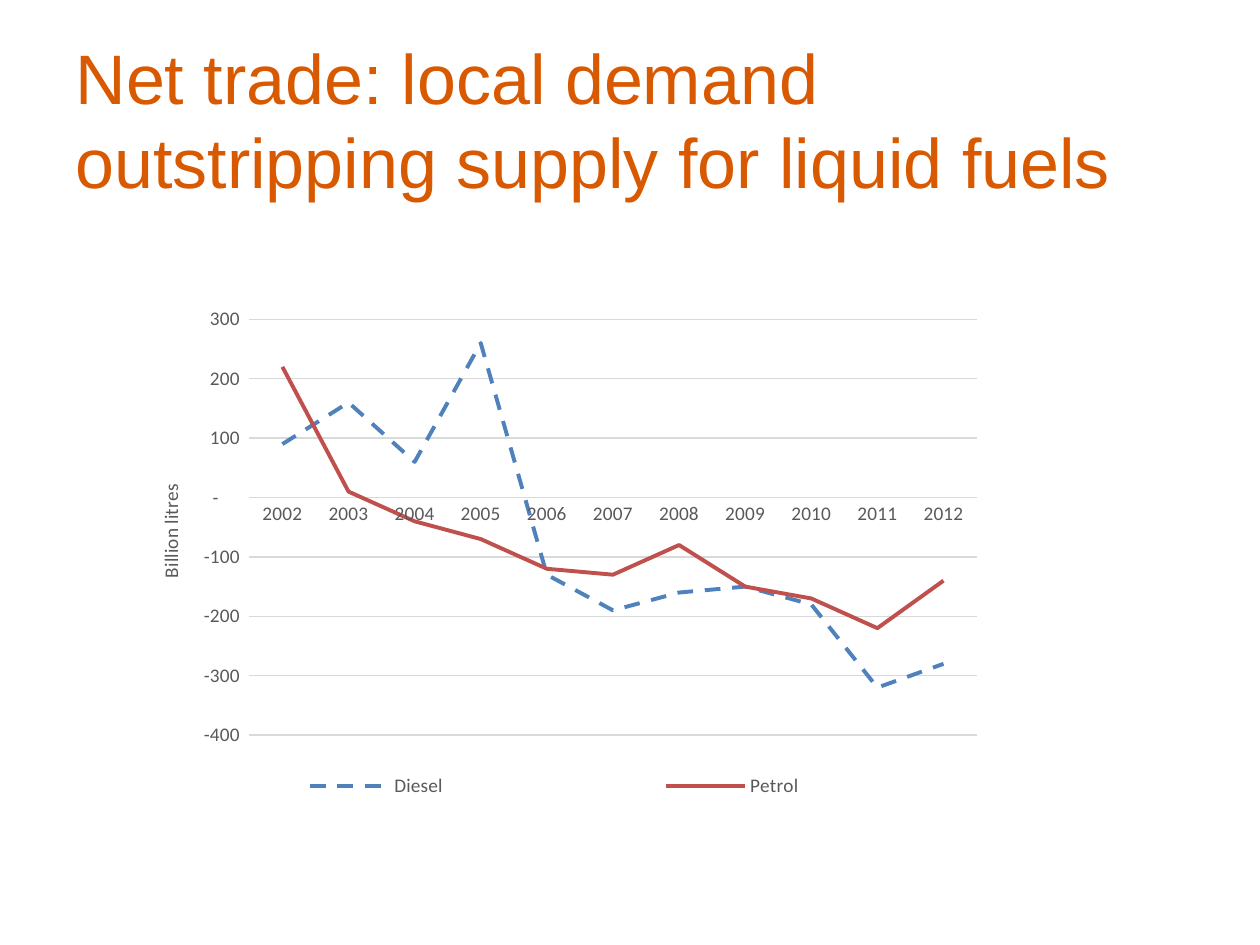
from lxml import etree
from pptx import Presentation
from pptx.chart.data import CategoryChartData
from pptx.dml.color import RGBColor
from pptx.enum.chart import XL_CHART_TYPE, XL_LEGEND_POSITION, XL_TICK_MARK
from pptx.enum.dml import MSO_LINE
from pptx.enum.text import MSO_ANCHOR, PP_ALIGN
from pptx.oxml.ns import qn
from pptx.util import Cm, Pt


def style(font, size, color, name="Calibri"):
    font.size, font.name, font.bold = Pt(size), name, False
    font.color.rgb = RGBColor.from_string(color)


def place(parent, before, inner=False, **fractions):
    """Give a chart part a manual layout in fractions of the chart."""
    for old in parent.findall(qn("c:layout")):
        parent.remove(old)
    layout = etree.Element(qn("c:layout"))
    manual = etree.SubElement(layout, qn("c:manualLayout"))
    settings = {"layoutTarget": "inner"} if inner else {}
    settings.update(xMode="edge", yMode="edge", **fractions)
    for tag, value in settings.items():
        etree.SubElement(manual, qn(f"c:{tag}")).set("val", str(value))
    parent.find(qn(before)).addprevious(layout)


prs = Presentation()
prs.slide_width, prs.slide_height = Cm(25.4), Cm(19.05)
s = prs.slides.add_slide(prs.slide_layouts[5])

# Title
title = s.shapes.title
title.left, title.top, title.width, title.height = Cm(1.27), Cm(0.64), Cm(22.86), Cm(3.48)
tf = title.text_frame
tf.text = "Net trade: local demand outstripping supply for liquid fuels"
tf.word_wrap = True
tf.vertical_anchor = MSO_ANCHOR.MIDDLE
p = tf.paragraphs[0]
p.alignment = PP_ALIGN.LEFT
style(p.font, 40, "D95900", "Arial")

# Line chart
data = CategoryChartData()
data.categories = [str(year) for year in range(2002, 2013)]
data.add_series("Diesel", [90, 160, 60, 260, -130, -190, -160, -150, -180, -320, -280])
data.add_series("Petrol", [220, 10, -40, -70, -120, -130, -80, -150, -170, -220, -140])
chart = s.shapes.add_chart(XL_CHART_TYPE.LINE, Cm(1.27), Cm(4.93), Cm(20.42), Cm(11.61), data).chart
chart.has_title = False
style(chart.font, 11, "000000")
plot = chart.plots[0]
plot.vary_by_categories = False
for series, color, dash in zip(plot.series, ("4F81BD", "C0504D"), (MSO_LINE.DASH, MSO_LINE.SOLID)):
    series.smooth = False
    line = series.format.line
    line.width, line.color.rgb, line.dash_style = Pt(2.25), RGBColor.from_string(color), dash

# Axes
cat, val = chart.category_axis, chart.value_axis
for axis in (cat, val):
    axis.major_tick_mark = axis.minor_tick_mark = XL_TICK_MARK.NONE
    style(axis.tick_labels.font, 11, "595959")
val.minimum_scale, val.maximum_scale, val.major_unit = -400, 300, 100
val.tick_labels.number_format = r'_ * #,##0_ ;_ * \-#,##0_ ;_ * "-"??_ ;_ '
val.tick_labels.number_format_is_linked = False
val.has_major_gridlines = True
for line in (cat.format.line, val.major_gridlines.format.line):
    line.width, line.color.rgb = Pt(0.75), RGBColor.from_string("D9D9D9")
val.format.line.fill.background()
tf = val.axis_title.text_frame
tf.text = "Billion litres"
style(tf.paragraphs[0].font, 11, "595959")
body = val.axis_title._element.find(".//" + qn("a:bodyPr"))
body.set("rot", "-5400000")
body.set("vert", "horz")

# Legend
chart.has_legend = True
legend = chart.legend
legend.position = XL_LEGEND_POSITION.BOTTOM
legend.include_in_layout = False
style(legend.font, 11, "595959")

# Layout of the chart parts
place(plot._element.getparent(), "c:lineChart", inner=True, x=0.184, y=0.13, w=0.718, h=0.722)
place(val.axis_title._element, "c:overlay", x=0.09, y=0.41)
place(legend._element, "c:overlay", x=0.03, y=0.9, w=0.91, h=0.08)

prs.save("out.pptx")
